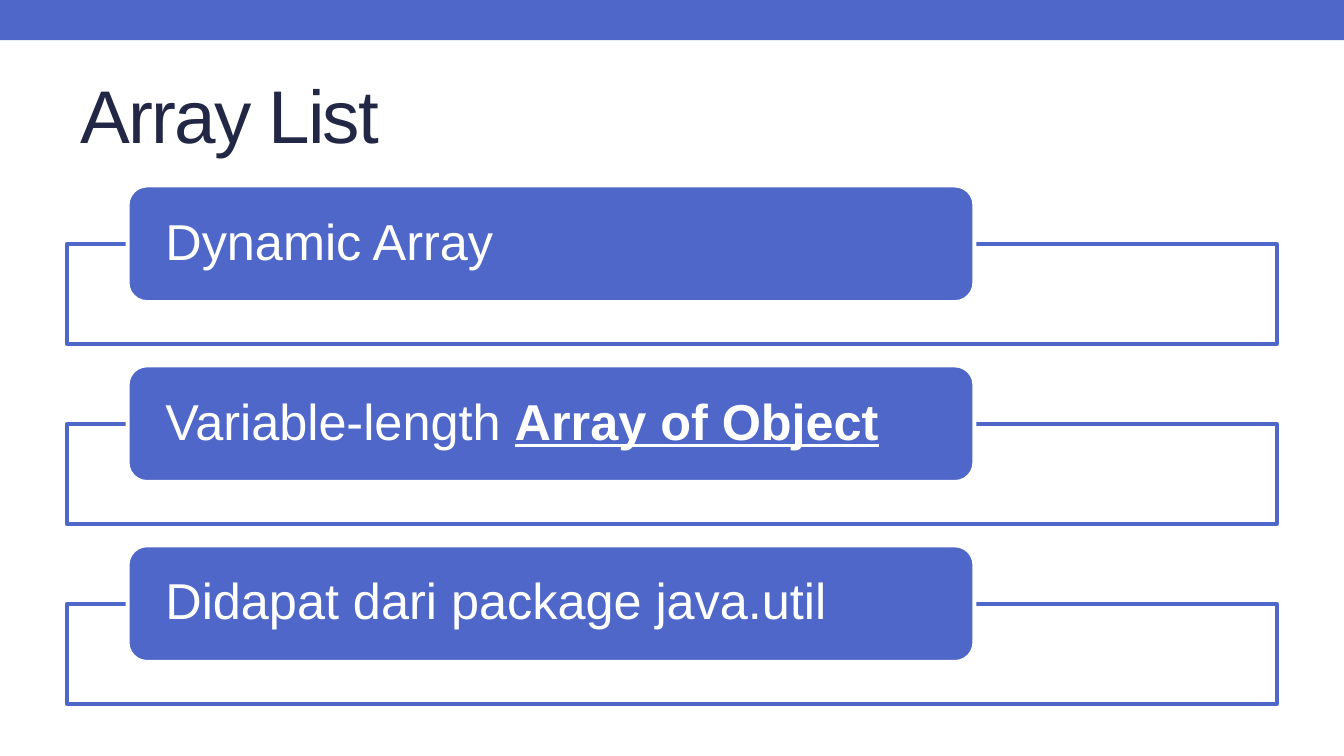
from pptx import Presentation
from pptx.dml.color import RGBColor
from pptx.enum.shapes import MSO_SHAPE
from pptx.enum.text import MSO_ANCHOR, PP_ALIGN
from pptx.util import Pt

# Content: each item is a list of (text, emphasised) runs
TITLE = "Array List"
ITEMS = [
    [("Dynamic Array", False)],
    [("Variable-length ", False), ("Array of Object", True)],
    [("Didapat dari package java.util", False)],
]

# Style and layout, in points
FONT = "Arial"
BLUE, NAVY, WHITE = "4E67C8", "212745", "FFFFFF"
SLIDE_W, SLIDE_H = 720, 405
MARGIN = 36
FRAME_TOP, FRAME_W, FRAME_H = 130.8, SLIDE_W - 2 * MARGIN, 53.5
LABEL_LEFT, LABEL_W, LABEL_H = 68.4, 453.6, 62.4
LABEL_RISE = 31.4
PITCH = 96.4
LINE_W = 2.08


def rgb(value):
    return RGBColor.from_string(value)


def add_box(s, kind, left, top, width, height, fill, line=None):
    sp = s.shapes.add_shape(kind, Pt(left), Pt(top), Pt(width), Pt(height))
    sp.shadow.inherit = False
    sp.fill.solid()
    sp.fill.fore_color.rgb = rgb(fill)
    if line:
        sp.line.color.rgb = rgb(line)
        sp.line.width = Pt(LINE_W)
    else:
        sp.line.fill.background()
    return sp


def style(p, size, color):
    p.alignment = PP_ALIGN.LEFT
    p.font.name = FONT
    p.font.size = Pt(size)
    p.font.color.rgb = rgb(color)


prs = Presentation()
prs.slide_width, prs.slide_height = Pt(SLIDE_W), Pt(SLIDE_H)
s = prs.slides.add_slide(prs.slide_layouts[5])

# Top band
add_box(s, MSO_SHAPE.RECTANGLE, 0, 0, SLIDE_W, 21.6, BLUE)

# Title
title = s.shapes.title
title.left, title.top = Pt(MARGIN), Pt(31.7)
title.width, title.height = Pt(FRAME_W), Pt(58.3)
tf = title.text_frame
tf.vertical_anchor = MSO_ANCHOR.MIDDLE
p = tf.paragraphs[0]
style(p, 40, NAVY)
r = p.add_run()
r.text = TITLE
r.font._element.set("spc", "-100")

# List: an outlined frame with a label over its top edge
for i, runs in enumerate(ITEMS):
    top = FRAME_TOP + i * PITCH
    add_box(s, MSO_SHAPE.RECTANGLE, MARGIN, top, FRAME_W, FRAME_H, WHITE, BLUE)
    label = add_box(s, MSO_SHAPE.ROUNDED_RECTANGLE, LABEL_LEFT, top - LABEL_RISE,
                    LABEL_W, LABEL_H, BLUE, WHITE)
    tf = label.text_frame
    tf.word_wrap = True
    tf.vertical_anchor = MSO_ANCHOR.MIDDLE
    tf.margin_left = tf.margin_right = Pt(17.2)
    tf.margin_top = tf.margin_bottom = 0
    p = tf.paragraphs[0]
    style(p, 27, WHITE)
    p.line_spacing = 0.9
    for text, strong in runs:
        r = p.add_run()
        r.text = text
        if strong:
            r.font.bold = r.font.underline = True

prs.save("out.pptx")
